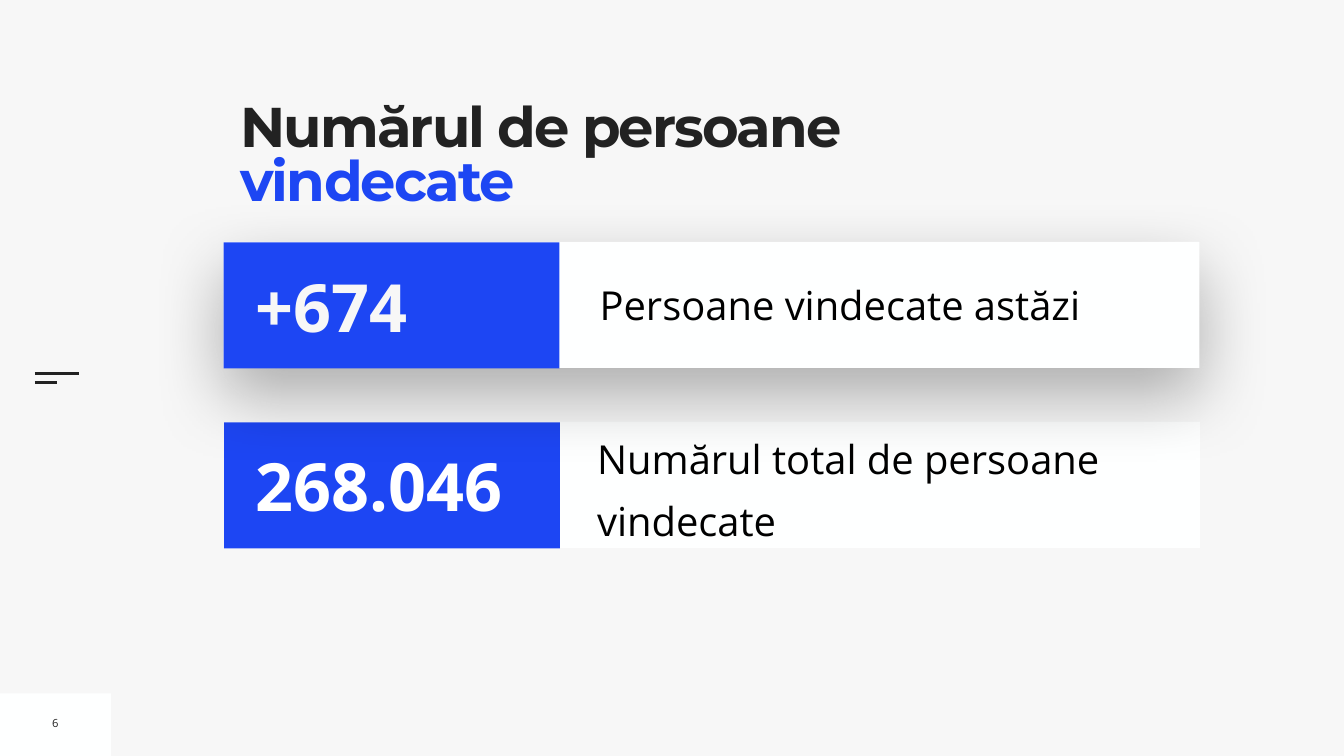
from dataclasses import dataclass
from lxml.etree import SubElement as Sub
from pptx import Presentation as Deck
from pptx.dml.color import RGBColor as Rgb
from pptx.enum.shapes import MSO_CONNECTOR as Link, MSO_SHAPE as Form
from pptx.enum.text import MSO_ANCHOR as Anchor, MSO_AUTO_SIZE as Fit, PP_ALIGN as Align
from pptx.oxml.ns import qn
from pptx.util import Inches, Pt


@dataclass(frozen=True)
class Theme:
    back: str = "F7F7F7"
    card: str = "FEFFFF"
    blue: str = "1D46F3"
    dark: str = "222222"
    black: str = "000000"
    white: str = "FFFFFF"
    head: str = "Montserrat"
    body: str = "Open Sans"
    title: int = 80
    value: int = 95
    label: int = 57
    page: int = 16


def assign(item, values):
    for name, value in values.items():
        setattr(item, name, value)


class Board:
    def __init__(self, slide, theme):
        self.slide, self.theme = slide, theme
        self.paint(slide.background, theme.back)

    def paint(self, item, color):
        item.fill.solid()
        item.fill.fore_color.rgb = Rgb.from_string(color)

    def style(self, run, font, size, color, bold=False):
        assign(run.font, {"name": font, "size": Pt(size), "bold": bold})
        run.font.color.rgb = Rgb.from_string(color)

    def frame(self, shape, pad=0.0, **values):
        """Set the padding and the other frame values of a text shape."""
        sides = ("left", "top", "right", "bottom")
        pads = {f"margin_{side}": Inches(pad) for side in sides}
        base = {"word_wrap": True, "auto_size": Fit.NONE}
        assign(shape.text_frame, base | pads | values)
        return shape.text_frame.paragraphs[0]

    def rect(self, box, color, home=None):
        shapes = (home or self.slide).shapes
        shape = shapes.add_shape(Form.RECTANGLE, *map(Inches, box))
        shape.shadow.inherit = False
        self.paint(shape, color)
        shape.line.fill.background()
        return shape

    def shade(self, shape):
        """Cast a soft black shadow straight down."""
        list_ = shape._element.spPr.find(qn("a:effectLst"))
        outer = Sub(list_, qn("a:outerShdw"), blurRad=str(Pt(100)),
                    dist=str(Pt(40)), dir="5400000", rotWithShape="0")
        color = Sub(outer, qn("a:srgbClr"), val=self.theme.black)
        Sub(color, qn("a:alpha"), val="30000")

    def line(self, left, top, width):
        ends = map(Inches, (left, top, left + width, top))
        line = self.slide.shapes.add_connector(Link.STRAIGHT, *ends)
        line.line.width = Pt(3)
        line.line.color.rgb = Rgb.from_string(self.theme.dark)
        Sub(line._element.spPr, qn("a:effectLst"))

    def title(self, box, parts):
        shape = self.slide.shapes.title
        names = ("left", "top", "width", "height")
        assign(shape, dict(zip(names, map(Inches, box))))
        self.paint(shape, self.theme.back)
        para = self.frame(shape, vertical_anchor=Anchor.TOP)
        assign(para, {"alignment": Align.LEFT, "line_spacing": 0.8})
        for text, color in parts:
            run = para.add_run()
            run.text = text
            self.style(run, self.theme.head, self.theme.title, color, True)
            run.font._element.set("spc", "-270")

    def text(self, box, text, size, color, bold=False, home=None,
             pad=0.1, wrap=True, **para):
        shapes = (home or self.slide).shapes
        shape = shapes.add_textbox(*map(Inches, box))
        first = self.frame(shape, pad, word_wrap=wrap,
                           vertical_anchor=Anchor.MIDDLE)
        assign(first, para)
        run = first.add_run()
        run.text = text
        self.style(run, self.theme.body, size, color, bold)

    def row(self, left, top, value, color, label, spot, shadow=False, **form):
        """Group a white card, its label and the blue value tile."""
        look = self.theme
        group = self.slide.shapes.add_group_shape()
        card = self.rect((left, top, 19.36, 2.5), look.card, group)
        if shadow:
            self.shade(card)
        self.text(spot, label, look.label, look.black, home=group, **form)
        self.rect((left, top + 0.01, 6.66, 2.5), look.blue, group)
        self.text((left + 0.53, top + 0.36, 6.03, 1.8), value, look.value,
                  color, True, group)


def main():
    deck = Deck()
    assign(deck, {"slide_width": Inches(26.67), "slide_height": Inches(15)})
    look = Theme()
    board = Board(deck.slides.add_slide(deck.slide_layouts[5]), look)

    board.rect((0, 13.76, 2.2, 1.24), look.card)
    board.line(0.69, 7.41, 0.88)
    board.line(0.69, 7.59, 0.44)
    board.title((4.77, 2.07, 13.01, 2.73),
                [("Numărul de persoane ", look.dark), ("vindecate", look.blue)])
    board.text((0.93, 14.09, 0.34, 0.51), "6", look.page, look.dark,
               wrap=False, alignment=Align.CENTER)
    board.row(4.45, 8.37, "268.046", look.white,
              "Numărul total de persoane vindecate", (11.85, 8.39, 11.95, 2.36),
              pad=0, line_spacing=1.3, space_before=Pt(20))
    board.row(4.44, 4.8, "+674", look.back, "Persoane vindecate astăzi",
              (11.8, 5.47, 11.76, 1.16), shadow=True)
    deck.save("out.pptx")


if __name__ == "__main__":
    main()
